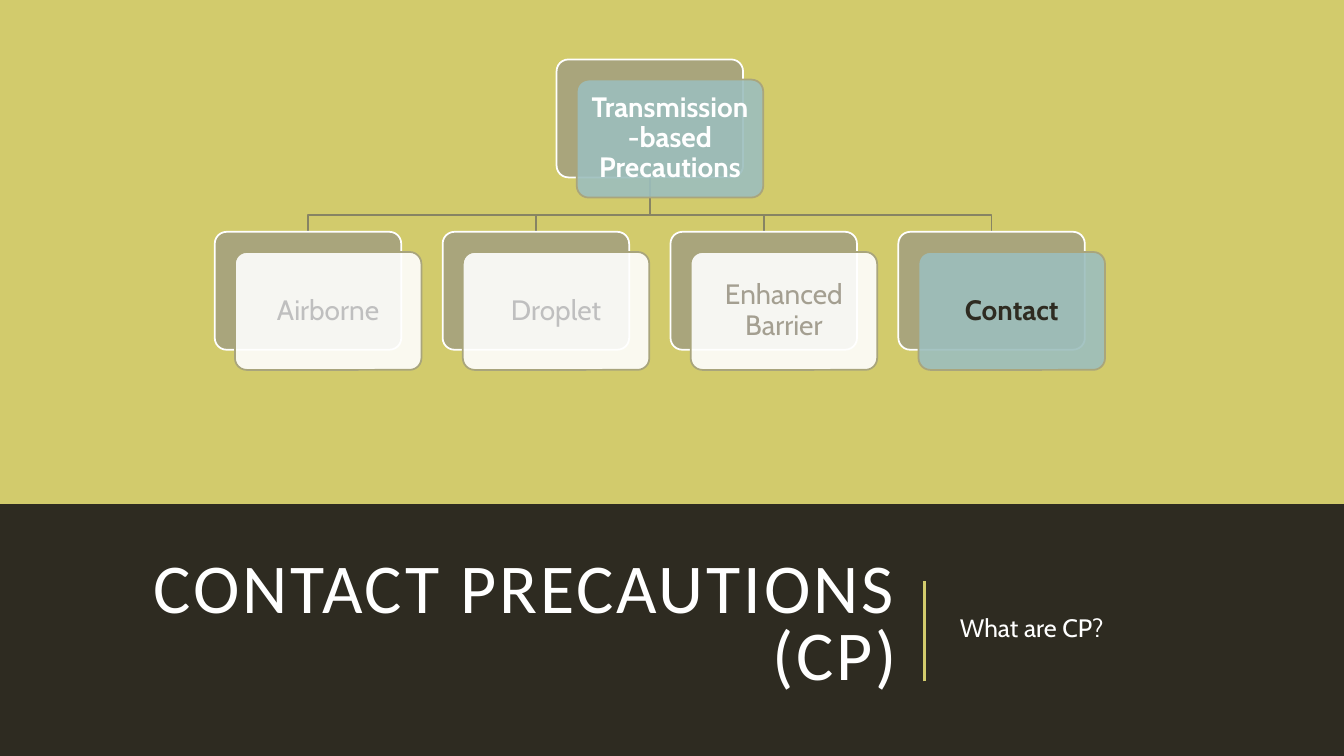
from dataclasses import dataclass

from lxml import etree
from pptx import Presentation
from pptx.dml.color import RGBColor
from pptx.enum.shapes import MSO_CONNECTOR, MSO_SHAPE
from pptx.enum.text import MSO_ANCHOR, PP_ALIGN
from pptx.oxml.ns import qn
from pptx.shapes.autoshape import Shape
from pptx.slide import Slide
from pptx.text.text import TextFrame
from pptx.util import Inches, Pt

ROUNDED, RECT = MSO_SHAPE.ROUNDED_RECTANGLE, MSO_SHAPE.RECTANGLE
STRAIGHT = MSO_CONNECTOR.STRAIGHT
MIDDLE = MSO_ANCHOR.MIDDLE
LEFT, CENTER, RIGHT = PP_ALIGN.LEFT, PP_ALIGN.CENTER, PP_ALIGN.RIGHT

COLORS = {
    "dark": "2E2B21", "lime": "D2CB6C", "white": "FFFFFF", "khaki": "A9A57C",
    "teal": "9CBEBD", "branch": "878463", "faded": "BFBFBF", "muted": "A49F91",
}
BODY_FONT, TITLE_FONT = "Cabin", "Calibri"
CARD_W, CARD_H = 1.85, 1.17
CARD_OFFSET = 0.2
FIRST_LEFT, CARD_STEP = 2.13, 2.26
ROOT_TOP, CHILD_TOP = 0.59, 2.3
BRANCH_Y = 2.13


@dataclass
class Card:
    text: str
    fill: str
    color: str
    bold: bool = False


ROOT = Card("Transmission-based Precautions", "teal", "white", True)
CHILDREN = [
    Card("Airborne", "white", "faded"),
    Card("Droplet", "white", "faded"),
    Card("Enhanced Barrier", "white", "muted"),
    Card("Contact", "teal", "dark", True),
]


def rgb(name: str) -> RGBColor:
    return RGBColor.from_string(COLORS[name])


def write(tf: TextFrame, text: str, size: int, color: str, align: PP_ALIGN,
          font: str = BODY_FONT, bold: bool = False, line_spacing: float = 1.0,
          tracking: float = 0) -> None:
    """Fill a frame with one run; tracking is the letter spacing in points."""
    tf.word_wrap = True
    tf.vertical_anchor = MIDDLE
    p = tf.paragraphs[0]
    p.alignment = align
    p.line_spacing = line_spacing
    p.space_before = Pt(0)
    r = p.add_run()
    r.text = text
    r.font.name, r.font.size, r.font.bold = font, Pt(size), bold
    r.font.color.rgb = rgb(color)
    if tracking:
        r._r.get_or_add_rPr().set("spc", str(int(tracking * 100)))


def add_panel(s: Slide, left: float, top: float, fill: str, line: str) -> Shape:
    sp = s.shapes.add_shape(ROUNDED, Inches(left), Inches(top),
                            Inches(CARD_W), Inches(CARD_H))
    sp.shadow.inherit = False
    sp.adjustments[0] = 0.1
    sp.fill.solid()
    sp.fill.fore_color.rgb = rgb(fill)
    sp.line.color.rgb = rgb(line)
    sp.line.width = Pt(1.25)
    return sp


def add_card(s: Slide, card: Card, left: float, top: float) -> None:
    """Draw a backing panel and a slightly transparent front panel with text."""
    add_panel(s, left, top, "khaki", "white")
    sp = add_panel(s, left + CARD_OFFSET, top + CARD_OFFSET, card.fill, "khaki")
    color = sp._element.spPr.find(qn("a:solidFill"))[0]
    etree.SubElement(color, qn("a:alpha")).set("val", "90000")
    tf = sp.text_frame
    tf.margin_left = tf.margin_right = Inches(0.08)
    tf.margin_top = tf.margin_bottom = Inches(0.08)
    write(tf, card.text, 20, card.color, CENTER, bold=card.bold, line_spacing=0.9)


def add_branch(s: Slide, root_left: float, child_left: float) -> None:
    start_x, end_x = (Inches(x + CARD_W / 2) for x in (root_left, child_left))
    builder = s.shapes.build_freeform(start_x, Inches(ROOT_TOP + CARD_H))
    builder.add_line_segments([(start_x, Inches(BRANCH_Y)),
                               (end_x, Inches(BRANCH_Y)),
                               (end_x, Inches(CHILD_TOP))], close=False)
    sp = builder.convert_to_shape()
    sp.shadow.inherit = False
    sp.fill.background()
    sp.line.color.rgb = rgb("branch")
    sp.line.width = Pt(1.25)


def place(sp: Shape, left: float, top: float, width: float, height: float) -> None:
    sp.left, sp.top = Inches(left), Inches(top)
    sp.width, sp.height = Inches(width), Inches(height)


def add_backdrop(s: Slide) -> None:
    s.background.fill.solid()
    s.background.fill.fore_color.rgb = rgb("dark")
    band = s.shapes.add_shape(RECT, 0, 0, Inches(13.33), Inches(5))
    band.shadow.inherit = False
    band.fill.solid()
    band.fill.fore_color.rgb = rgb("lime")
    band.line.fill.background()
    divider = s.shapes.add_connector(STRAIGHT, Inches(9.17), Inches(6.76),
                                     Inches(9.17), Inches(5.76))
    divider.line.color.rgb = rgb("lime")
    divider.line.width = Pt(1.5)
    etree.SubElement(divider._element.spPr, qn("a:effectLst"))


def main() -> None:
    prs = Presentation()
    prs.slide_width, prs.slide_height = Inches(13.33), Inches(7.5)
    s = prs.slides.add_slide(prs.slide_layouts[2])
    add_backdrop(s)

    title, body = s.shapes.title, s.placeholders[1]
    place(title, 0.5, 5.42, 8.5, 1.6)
    write(title.text_frame, "CONTACT PRECAUTIONS (CP)", 50, "white", RIGHT,
          font=TITLE_FONT, line_spacing=0.8, tracking=2)
    place(body, 9.42, 5.42, 3.5, 1.6)
    write(body.text_frame, "What are CP?", 18, "white", LEFT)
    body.text_frame.paragraphs[0].space_after = Pt(2)

    lefts = [FIRST_LEFT + i * CARD_STEP for i in range(len(CHILDREN))]
    root_left = (lefts[0] + lefts[-1]) / 2
    for left in lefts:
        add_branch(s, root_left, left)
    add_card(s, ROOT, root_left, ROOT_TOP)
    for card, left in zip(CHILDREN, lefts):
        add_card(s, card, left, CHILD_TOP)

    prs.save("out.pptx")


if __name__ == "__main__":
    main()
